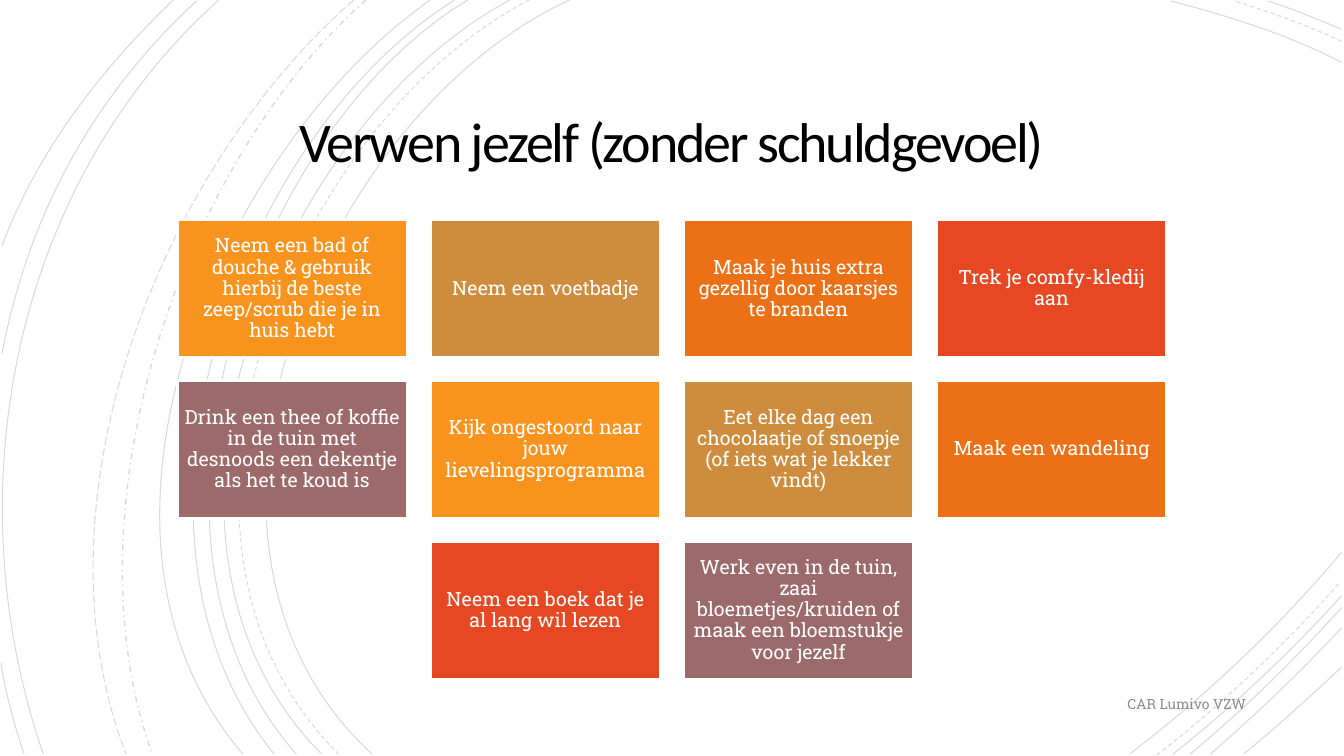
from dataclasses import dataclass

from lxml import etree
from pptx import Presentation
from pptx.dml.color import RGBColor
from pptx.enum.dml import MSO_LINE
from pptx.enum.shapes import MSO_SHAPE
from pptx.enum.text import MSO_ANCHOR, PP_ALIGN
from pptx.oxml.ns import qn
from pptx.util import Cm, Pt

SOLID, DASH = MSO_LINE.SOLID, MSO_LINE.DASH
DASH_DOT, LONG_DASH = MSO_LINE.DASH_DOT, MSO_LINE.LONG_DASH
RECTANGLE = MSO_SHAPE.RECTANGLE
MIDDLE = MSO_ANCHOR.MIDDLE
CENTER, RIGHT = PP_ALIGN.CENTER, PP_ALIGN.RIGHT


@dataclass(frozen=True)
class Theme:
    heading_font: str = "Calibri"
    body_font: str = "Roboto Slab"
    black: str = "000000"
    white: str = "FFFFFF"
    gray: str = "8C8C8C"
    card_fills: tuple = ("F8931D", "CE8D3E", "EC7016", "E64823", "9C6A6A")
    title_size: int = 40
    card_size: int = 14
    footer_size: int = 10
    title_spacing: int = -150
    arc_alpha: int = 15000


THEME = Theme()

CARD_ROWS = (
    (
        "Neem een bad of douche & gebruik hierbij de beste zeep/scrub die je in huis hebt",
        "Neem een voetbadje",
        "Maak je huis extra gezellig door kaarsjes te branden",
        "Trek je comfy-kledij aan",
    ),
    (
        "Drink een thee of koffie in de tuin met desnoods een dekentje als het te koud is",
        "Kijk ongestoord naar jouw lievelingsprogramma",
        "Eet elke dag een chocolaatje of snoepje (of iets wat je lekker vindt)",
        "Maak een wandeling",
    ),
    (
        "Neem een boek dat je al lang wil lezen",
        "Werk even in de tuin, zaai bloemetjes/kruiden of maak een bloemstukje voor jezelf",
    ),
)

ARC_SCALE = Cm(2.54) / 100
ARCS = (
    (SOLID, 0.75, ((565, 0), (315, 115), (143, 540), (369, 748))),
    (SOLID, 0.75, ((1331, 62), (1278, 34), (1218, 16), (1162, 1))),
    (SOLID, 0.75, ((1121, 748), (1197, 690), (1269, 622), (1331, 548))),
    (DASH, 0.75, ((525, 0), (285, 125), (123, 537), (336, 748))),
    (DASH, 0.75, ((1331, 41), (1297, 25), (1260, 12), (1225, 1))),
    (DASH, 0.75, ((1148, 749), (1213, 698), (1275, 640), (1330, 577))),
    (SOLID, 0.75, ((506, 0), (270, 127), (110, 537), (319, 748))),
    (SOLID, 0.75, ((1331, 29), (1307, 19), (1283, 9), (1258, 1))),
    (SOLID, 0.75, ((1164, 748), (1223, 701), (1280, 648), (1331, 591))),
    (SOLID, 0.75, ((464, 0), (244, 133), (110, 541), (294, 748))),
    (SOLID, 0.75, ((1181, 748), (1234, 704), (1284, 655), (1331, 603))),
    (SOLID, 0.75, ((451, 0), (231, 138), (97, 533), (272, 748))),
    (SOLID, 0.75, ((1201, 748), (1246, 709), (1290, 667), (1331, 623))),
    (SOLID, 0.75, ((427, 0), (217, 147), (53, 529), (241, 748))),
    (SOLID, 0.75, ((1234, 748), (1267, 721), (1299, 692), (1331, 662))),
    (DASH_DOT, 1, ((363, 0), (176, 166), (65, 509), (151, 748))),
    (LONG_DASH, 0.75, ((351, 0), (157, 169), (29, 499), (125, 748))),
    (SOLID, 0.75, ((217, 0), (11, 185), (-46, 490), (43, 748))),
    (SOLID, 0.75, ((195, 1), (92, 96), (28, 214), (2, 351))),
    (SOLID, 0.75, ((1, 658), (6, 689), (14, 719), (24, 748))),
    (SOLID, 0.75, ((172, 0), (100, 69), (37, 150), (2, 244))),
)


def add_arc(shapes, dash, width, points):
    start, *controls = points
    builder = shapes.build_freeform(*start, scale=ARC_SCALE)
    builder.add_line_segments(controls, close=False)
    arc = builder.convert_to_shape()
    arc.shadow.inherit = False
    arc.fill.background()
    arc.line.width = Pt(width)
    arc.line.color.rgb = RGBColor.from_string(THEME.black)
    arc.line.dash_style = dash

    outline = next(arc.element.iter(qn("a:path")))
    curve = etree.SubElement(outline, qn("a:cubicBezTo"))
    for segment in outline.findall(qn("a:lnTo")):
        curve.append(segment[0])
        outline.remove(segment)

    color = next(arc.element.spPr.find(qn("a:ln")).iter(qn("a:srgbClr")))
    etree.SubElement(color, qn("a:alpha"), val=str(THEME.arc_alpha))


def write_text(shape, text, font_name, size, color, alignment, inset, line_spacing=1.0):
    frame = shape.text_frame
    frame.word_wrap = True
    frame.vertical_anchor = MIDDLE
    frame.margin_left = frame.margin_right = inset
    frame.margin_top = frame.margin_bottom = inset
    paragraph = frame.paragraphs[0]
    paragraph.text = text
    paragraph.alignment = alignment
    paragraph.line_spacing = line_spacing
    paragraph.font.name = font_name
    paragraph.font.size = Pt(size)
    paragraph.font.color.rgb = RGBColor.from_string(color)
    return paragraph


def add_title(slide, text):
    box = slide.shapes.add_textbox(Cm(4.88), Cm(2.21), Cm(24.1), Cm(2.92))
    paragraph = write_text(box, text, THEME.heading_font, THEME.title_size,
                           THEME.black, CENTER, Cm(0.64), 0.85)
    properties = paragraph.runs[0]._r.get_or_add_rPr()
    properties.set("spc", str(THEME.title_spacing))


def add_footer(slide, text):
    box = slide.shapes.add_textbox(Cm(2.24), Cm(17.3), Cm(29.41), Cm(0.89))
    write_text(box, text, THEME.body_font, THEME.footer_size,
               THEME.gray, RIGHT, Cm(0.25))


def add_card(slide, left, top, fill, text):
    card = slide.shapes.add_shape(RECTANGLE, left, top, Cm(5.79), Cm(3.48))
    card.shadow.inherit = False
    card.fill.solid()
    card.fill.fore_color.rgb = RGBColor.from_string(fill)
    card.line.color.rgb = RGBColor.from_string(THEME.white)
    card.line.width = Pt(2)
    write_text(card, text, THEME.body_font, THEME.card_size,
               THEME.white, CENTER, Cm(0.15), 0.9)


def add_card_grid(slide):
    columns = len(CARD_ROWS[0])
    for row, texts in enumerate(CARD_ROWS):
        indent = (columns - len(texts)) / 2
        for column, text in enumerate(texts):
            left = Cm(4.47 + 6.38 * (column + indent))
            top = Cm(5.54 + 4.05 * row)
            fill = THEME.card_fills[(row * columns + column) % len(THEME.card_fills)]
            add_card(slide, left, top, fill, text)


def main():
    presentation = Presentation()
    presentation.slide_width = Cm(33.87)
    presentation.slide_height = Cm(19.05)
    slide = presentation.slides.add_slide(presentation.slide_layouts[6])
    slide.background.fill.solid()
    slide.background.fill.fore_color.rgb = RGBColor.from_string(THEME.white)

    arcs = slide.shapes.add_group_shape()
    for dash, width, points in ARCS:
        add_arc(arcs.shapes, dash, width, points)
    add_title(slide, "Verwen jezelf (zonder schuldgevoel)")
    add_footer(slide, "CAR Lumivo VZW")
    add_card_grid(slide)
    presentation.save("out.pptx")


if __name__ == "__main__":
    main()
